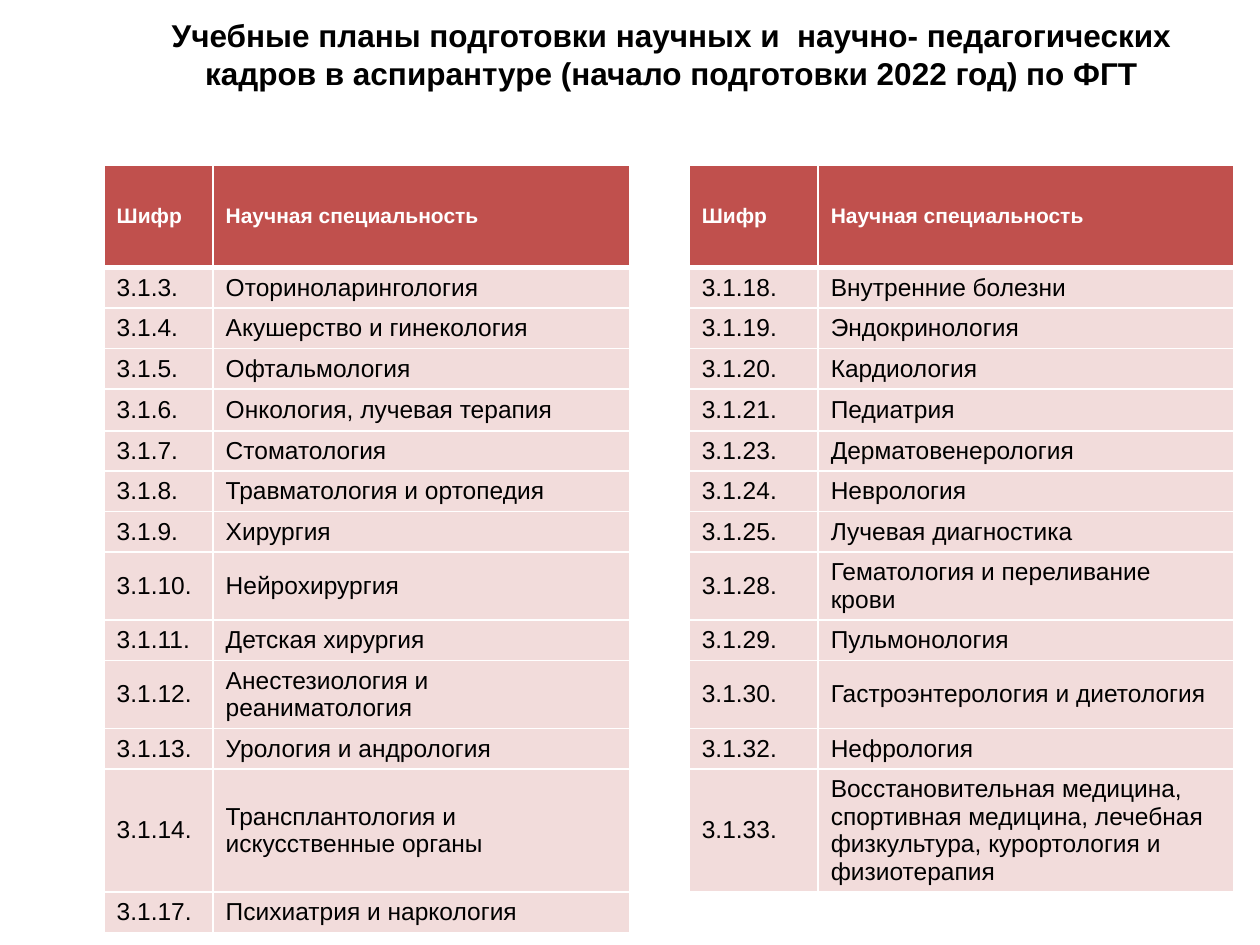
"""Build the slide with the 2022 postgraduate study plans."""
from lxml import etree
from pptx import Presentation
from pptx import util as u
from pptx.dml.color import RGBColor
from pptx.enum import text as t
from pptx.oxml import ns

RED = RGBColor(0xC0, 0x50, 0x4D)
PINK = RGBColor(0xF2, 0xDC, 0xDB)
WHITE = RGBColor(0xFF, 0xFF, 0xFF)
BLACK = RGBColor(0, 0, 0)

TITLE = ("Учебные планы подготовки научных и  научно- педагогических "
         "кадров в аспирантуре (начало подготовки 2022 год) по ФГТ")
HEAD = ("Шифр", "Научная специальность")
LEFT = [
    ("3.1.3.", "Оториноларингология"),
    ("3.1.4.", "Акушерство и гинекология"),
    ("3.1.5.", "Офтальмология"),
    ("3.1.6.", "Онкология, лучевая терапия"),
    ("3.1.7.", "Стоматология"),
    ("3.1.8.", "Травматология и ортопедия"),
    ("3.1.9.", "Хирургия"),
    ("3.1.10.", "Нейрохирургия"),
    ("3.1.11.", "Детская хирургия"),
    ("3.1.12.", "Анестезиология и реаниматология"),
    ("3.1.13.", "Урология и андрология"),
    ("3.1.14.", "Трансплантология и искусственные органы"),
    ("3.1.17.", "Психиатрия и наркология"),
]
RIGHT = [
    ("3.1.18.", "Внутренние болезни"),
    ("3.1.19.", "Эндокринология"),
    ("3.1.20.", "Кардиология"),
    ("3.1.21.", "Педиатрия"),
    ("3.1.23.", "Дерматовенерология"),
    ("3.1.24.", "Неврология"),
    ("3.1.25.", "Лучевая диагностика"),
    ("3.1.28.", "Гематология и переливание крови"),
    ("3.1.29.", "Пульмонология"),
    ("3.1.30.", "Гастроэнтерология и диетология"),
    ("3.1.32.", "Нефрология"),
    ("3.1.33.", "Восстановительная медицина, спортивная медицина, "
                "лечебная физкультура, курортология и физиотерапия"),
    ("", ""),
]
COLS = (62.3, 238.3, 33.8, 73.7, 237.6)
ROW = 23.1
TALL = {0: 58.5, 4: 24, 8: 38.9, 10: 38.9, 12: 70.3}
PAD = 1.5


def write(frame, words, size=14, bold=False, color=BLACK, align=None):
    """Put one formatted paragraph into a text frame."""
    par = frame.paragraphs[0]
    par.alignment = align
    if not words:
        par._p.get_or_add_endParaRPr().set("sz", str(size * 100))
        return
    run = par.add_run()
    run.text = words
    font = run.font
    font.name, font.size, font.bold = "Arial", u.Pt(size), bold
    font.color.rgb = color


class Page:
    """Hold the slide and its line style."""

    def __init__(self, slide, line=WHITE):
        self.slide = slide
        self.line = line

    def title(self, words, x, y, w, h):
        """Add the centred heading."""
        frame = self.slide.shapes.add_textbox(*map(u.Pt, (x, y, w, h))).text_frame
        frame.word_wrap = True
        frame.vertical_anchor = t.MSO_ANCHOR.TOP
        frame.margin_top = u.Pt(9)
        write(frame, words, size=18, bold=True, align=t.PP_ALIGN.CENTER)

    def edge(self, cell, side, width):
        """Draw one border of a cell."""
        line = etree.SubElement(cell._tc.get_or_add_tcPr(), ns.qn(f"a:ln{side}"),
                                w=str(u.Pt(width)))
        fill = etree.SubElement(line, ns.qn("a:solidFill"))
        etree.SubElement(fill, ns.qn("a:srgbClr"), val=str(self.line))

    def cell(self, cell, words, row):
        """Fill, frame and label one cell."""
        head = row == 0
        cell.vertical_anchor = t.MSO_ANCHOR.MIDDLE
        cell.margin_top = cell.margin_bottom = u.Pt(PAD)
        for side in "LRTB":
            thick = (side, row) in (("B", 0), ("T", 1))
            self.edge(cell, side, 3 if thick else 1)
        cell.fill.solid()
        cell.fill.fore_color.rgb = (RED if head else PINK) if words else WHITE
        write(cell.text_frame, words, size=12 if head else 14, bold=head,
              color=WHITE if head else BLACK)

    def table(self, rows, x, y):
        """Add the table of codes and specialties."""
        highs = [TALL.get(i, ROW) for i in range(len(rows))]
        grid = self.slide.shapes.add_table(
            len(rows), len(COLS), u.Pt(x), u.Pt(y),
            u.Pt(sum(COLS)), u.Pt(sum(highs))).table
        for col, wide in zip(grid.columns, COLS):
            col.width = u.Pt(wide)
        for i, (row, high) in enumerate(zip(rows, highs)):
            grid.rows[i].height = u.Pt(high)
            for j, words in enumerate(row):
                self.cell(grid.cell(i, j), words, i)


def main():
    """Make and save the deck."""
    deck = Presentation()
    deck.slide_width, deck.slide_height = u.Pt(720), u.Pt(540)
    page = Page(deck.slides.add_slide(deck.slide_layouts[6]))
    page.title(TITLE, 57.6, 0, 652.3, 82.8)
    rows = [(*a, "", *b) for a, b in zip([HEAD] + LEFT, [HEAD] + RIGHT)]
    page.table(rows, 59.5, 94.5)
    deck.save("out.pptx")


if __name__ == "__main__":
    main()
